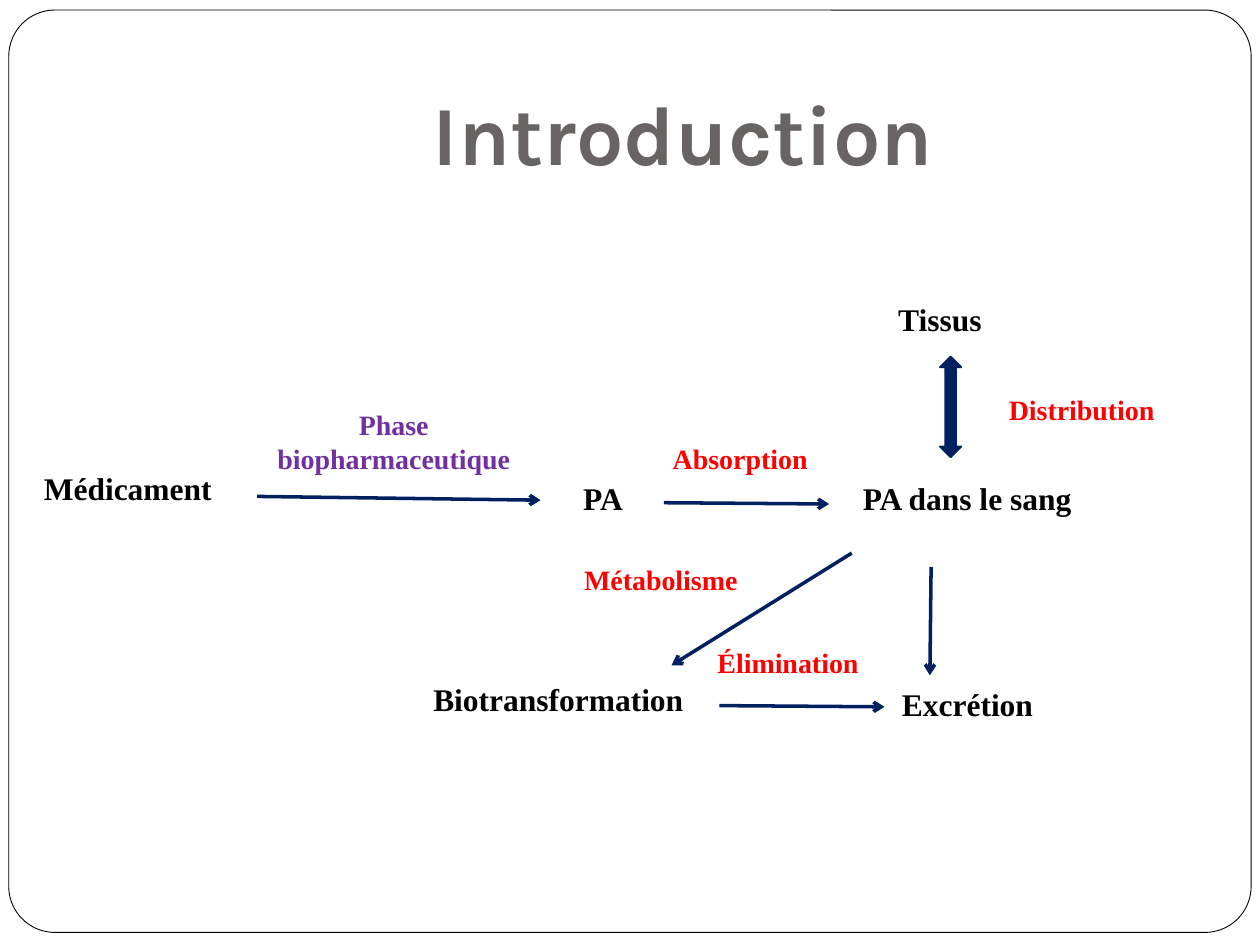
from lxml import etree
from pptx import Presentation
from pptx.dml.color import RGBColor
from pptx.enum import shapes as sh, text as tx
from pptx.oxml import ns
from pptx.util import Inches, Pt

BLACK = RGBColor(0, 0, 0)
WHITE = RGBColor(255, 255, 255)
GREY = RGBColor(0x69, 0x64, 0x64)
NAVY = RGBColor(0x00, 0x20, 0x60)
PURPLE = RGBColor(0x70, 0x30, 0xA0)
RED = RGBColor(255, 0, 0)
SERIF = "Times New Roman"


def write(frame, words, color, style, align):
    frame.text = words
    frame.word_wrap = True
    para = frame.paragraphs[0]
    para.alignment = align
    font = para.runs[0].font
    for key, value in style.items():
        setattr(font, key, value)
    font.color.rgb = color


def draw(kind, box, fill=None, line=None, width=1):
    shape = slide.shapes.add_shape(kind, *map(Inches, box))
    shape.shadow.inherit = False
    for part, color in ((shape.fill, fill), (shape.line.fill, line)):
        if color is None:
            part.background()
        else:
            part.solid()
            part.fore_color.rgb = color
    if line is not None:
        shape.line.width = Pt(width)
    return shape


deck = Presentation()
deck.slide_width, deck.slide_height = Inches(10), Inches(7.5)
slide = deck.slides.add_slide(deck.slide_layouts[5])
title = slide.shapes.title

# Frame, placed behind the title
frame = draw(sh.MSO_SHAPE.ROUNDED_RECTANGLE, (0.07, 0.08, 9.86, 7.32), WHITE, BLACK, 0.5)
frame.adjustments[0] = 0.05
title.element.addprevious(frame.element)

# Title
place = {"left": 1.17, "top": 0.3, "width": 8.5, "height": 1.25}
for key, value in place.items():
    setattr(title, key, Inches(value))
title.text_frame.vertical_anchor = tx.MSO_ANCHOR.BOTTOM
title.text_frame.margin_bottom = Inches(0.1)
write(title.text_frame, "Introduction", GREY,
      {"name": "Karla", "size": Pt(48), "bold": True}, tx.PP_ALIGN.CENTER)

# Stages
stages = [
    ("Médicament", 0.25, 3.67, 1.74),
    ("PA", 4.53, 3.75, 0.82),
    ("PA dans le sang", 6.75, 3.75, 2.27),
    ("Tissus", 7.03, 2.33, 1),
    ("Excrétion", 7.06, 5.39, 1.52),
    ("Biotransformation", 3.34, 5.35, 2.49),
]
style = {"name": SERIF, "size": Pt(18), "bold": True}
for words, left, top, width in stages:
    box = slide.shapes.add_textbox(*map(Inches, (left, top, width, 0.4)))
    write(box.text_frame, words, BLACK, style, tx.PP_ALIGN.LEFT)

# Arrows between stages
arrows = [
    (2.04, 3.94, 4.29, 3.97),
    (5.27, 3.99, 6.58, 4),
    (6.76, 4.39, 5.33, 5.28),
    (7.39, 4.5, 7.38, 5.36),
    (5.71, 5.6, 7.02, 5.61),
]
for ends in arrows:
    arrow = slide.shapes.add_connector(sh.MSO_CONNECTOR.STRAIGHT, *map(Inches, ends))
    arrow.line.color.rgb = NAVY
    arrow.line.width = Pt(2)
    etree.SubElement(arrow.line._get_or_add_ln(), ns.qn("a:tailEnd"), type="arrow")
    etree.SubElement(arrow.element.spPr, ns.qn("a:effectLst"))

# Exchange between blood and tissues
draw(sh.MSO_SHAPE.UP_DOWN_ARROW, (7.46, 2.83, 0.17, 0.8), NAVY, NAVY)

# Process labels
labels = [
    ("Phase biopharmaceutique", PURPLE, 1.83, 3.18, 2.59),
    ("Absorption", RED, 5.08, 3.31, 1.59),
    ("Distribution", RED, 7.64, 2.92, 1.89),
    ("Élimination", RED, 5.34, 4.93, 1.83),
    ("Métabolisme", RED, 4.34, 4.27, 1.81),
]
style["size"] = Pt(16)
for words, color, left, top, width in labels:
    label = draw(sh.MSO_SHAPE.ROUNDED_RECTANGLE, (left, top, width, 0.65))
    label.text_frame.vertical_anchor = tx.MSO_ANCHOR.MIDDLE
    write(label.text_frame, words, color, style, tx.PP_ALIGN.CENTER)

deck.save("out.pptx")
